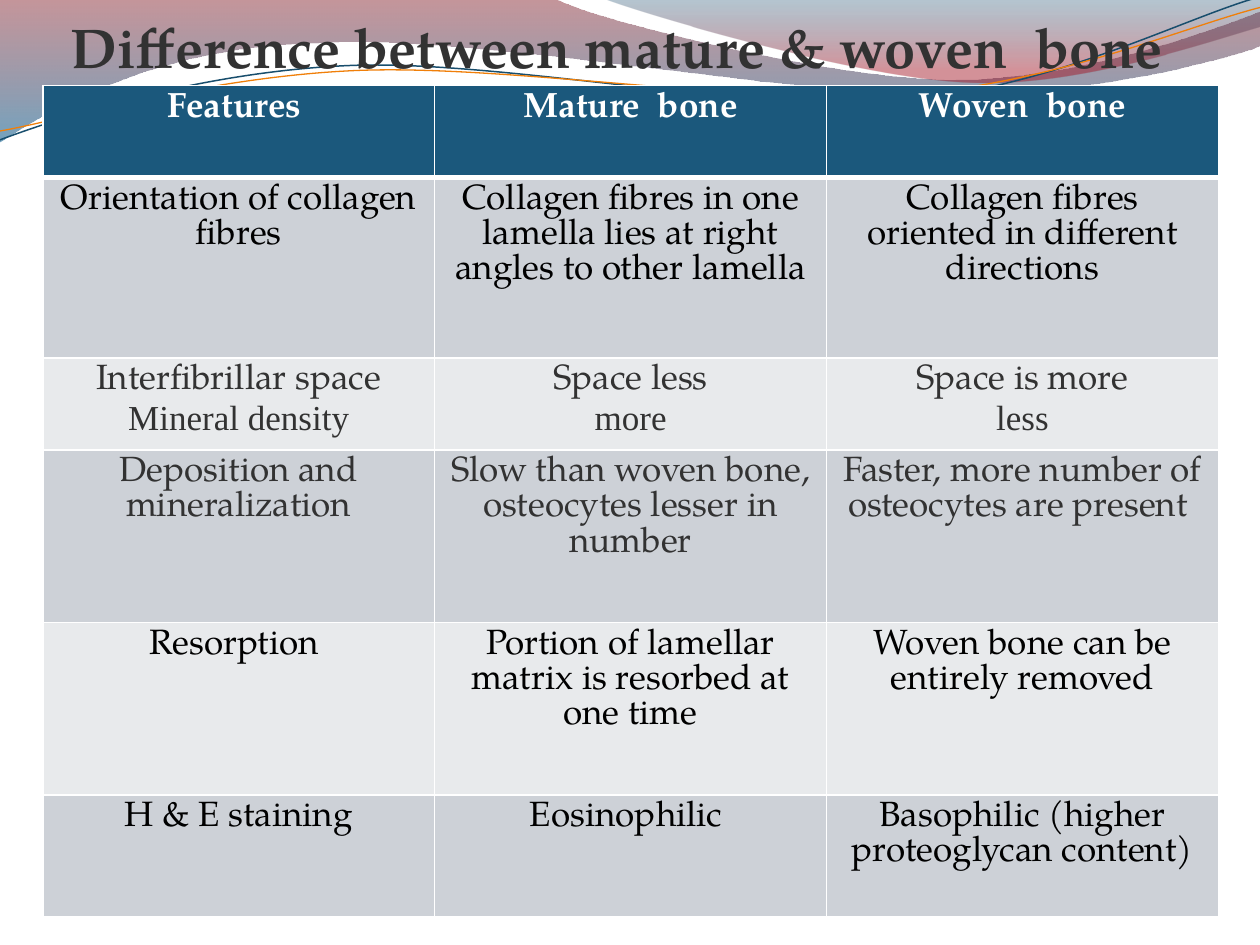
from dataclasses import dataclass
from math import cos, radians, sin
from typing import Optional

from lxml import etree
from pptx import Presentation
from pptx.dml.color import RGBColor
from pptx.enum.text import MSO_ANCHOR, PP_ALIGN
from pptx.oxml.ns import qn
from pptx.util import Inches, Pt

CENTER, LEFT = PP_ALIGN.CENTER, PP_ALIGN.LEFT
BOTTOM = MSO_ANCHOR.BOTTOM

WHITE = RGBColor(0xFF, 0xFF, 0xFF)
BLACK = RGBColor(0x00, 0x00, 0x00)
CHARCOAL = RGBColor(0x32, 0x32, 0x32)
HEADER_BLUE = RGBColor(0x1B, 0x58, 0x7C)
BAND_DARK = RGBColor(0xCD, 0xD1, 0xD7)
BAND_LIGHT = RGBColor(0xE8, 0xEA, 0xEC)
WINE = RGBColor(0x7E, 0x16, 0x21)
OCEAN = RGBColor(0x00, 0x56, 0x89)
NAVY = RGBColor(0x09, 0x44, 0x67)
CRIMSON = RGBColor(0xA1, 0x0F, 0x1F)
LINE_BLUE = RGBColor(0x18, 0x4E, 0x6D)
LINE_ORANGE = RGBColor(0xF0, 0x7F, 0x09)

SERIF, SECOND_SERIF = "TeX Gyre Pagella", "Times New Roman"
LINE_TILT = 2.7


@dataclass(frozen=True)
class GradientStop:
    position: float
    color: RGBColor
    opacity: int


@dataclass(frozen=True)
class Wave:
    """Outline in inches: 2 numbers make a line, 6 a Bezier curve."""
    start: tuple[float, float]
    segments: list[tuple[float, ...]]
    stops: tuple[GradientStop, ...] = ()
    line_color: Optional[RGBColor] = None
    line_width: float = 0
    pivot: tuple[float, float] = (0, 0)


@dataclass(frozen=True)
class TableRow:
    height: float
    texts: tuple[str, str, str]
    fill: RGBColor
    color: RGBColor = BLACK


WAVES = [
    Wave((0, 0), [(4.4, -0.01), (4.76, 0.17, 6.64, 0.63, 7.58, 0.63),
                  (8.53, 0.63, 9.58, 0.26, 10, 0.09), (10.01, 0.36),
                  (9.83, 0.44, 8.7, 0.76, 7.46, 0.75),
                  (6.22, 0.75, 3.82, 0.28, 2.57, 0.34),
                  (1.29, 0.36, 0.46, 0.83, -0.01, 1.13), (0, 0)],
         (GradientStop(0, WINE, 45), GradientStop(1, OCEAN, 55))),
    Wave((4.79, -0.01), [(5.09, 0.11, 6.82, 0.62, 7.69, 0.65),
                         (8.56, 0.69, 9.61, 0.32, 10, 0.21), (10, 0), (4.79, -0.01)],
         (GradientStop(0, NAVY, 30), GradientStop(0.8, CRIMSON, 45))),
    Wave((0, 1.11), [(0.48, 0.93, 1.58, 0.57, 2.77, 0.52),
                     (3.95, 0.47, 5.93, 0.89, 7.13, 0.8),
                     (8.33, 0.71, 9.38, 0.15, 9.98, -0.02)],
         line_color=LINE_BLUE, line_width=0.85, pivot=(4.99, 0.58)),
    Wave((0, 1.04), [(0.47, 0.96, 1.64, 0.61, 2.83, 0.56),
                     (4.03, 0.51, 5.97, 0.84, 7.17, 0.75),
                     (8.36, 0.67, 9.41, 0.21, 10, 0.06)],
         line_color=LINE_ORANGE, line_width=0.75, pivot=(5, 0.59)),
]

ROWS = [
    TableRow(0.73, ("Features ", "Mature  bone", "Woven  bone"), HEADER_BLUE, WHITE),
    TableRow(1.43, ("Orientation of collagen fibres",
                    "Collagen fibres in one lamella lies at right angles to other lamella",
                    "Collagen fibres oriented in different directions"), BAND_DARK),
    TableRow(0.73, ("Interfibrillar space\nMineral density", "Space less\nmore",
                    "Space is more\nless"), BAND_LIGHT, CHARCOAL),
    TableRow(1.37, ("Deposition and mineralization",
                    "Slow than woven bone, osteocytes lesser in number",
                    "Faster, more number of osteocytes are present "), BAND_DARK, CHARCOAL),
    TableRow(1.37, ("Resorption ", "Portion of lamellar matrix is resorbed at one time",
                    "Woven bone can be entirely removed"), BAND_LIGHT),
    TableRow(0.97, ("H & E staining", "Eosinophilic ",
                    "Basophilic (higher proteoglycan content)"), BAND_DARK),
]


def outline_points(wave: Wave) -> list[tuple[int, int]]:
    """List every corner and control point, levelled around the pivot of a line."""
    points = [wave.start]
    for segment in wave.segments:
        points += zip(segment[::2], segment[1::2])
    angle = 0 if wave.stops else radians(LINE_TILT)
    px, py = wave.pivot
    return [(Inches(px + (x - px) * cos(angle) - (y - py) * sin(angle)),
             Inches(py + (x - px) * sin(angle) + (y - py) * cos(angle)))
            for x, y in points]


def bend_segments(shape, wave: Wave) -> None:
    """Join each three steps of a curved segment into one Bezier curve."""
    steps = iter(list(shape._element.iter(qn("a:lnTo"))))
    for segment in wave.segments:
        first = next(steps)
        if len(segment) == 2:
            continue
        first.addprevious(curve := etree.Element(qn("a:cubicBezTo")))
        for step in (first, next(steps), next(steps)):
            curve.append(step[0])
            step.getparent().remove(step)


def draw_wave(slide, wave: Wave) -> None:
    first, *others = outline_points(wave)
    builder = slide.shapes.build_freeform(*first)
    builder.add_line_segments(others, close=bool(wave.stops))
    shape = builder.convert_to_shape()
    bend_segments(shape, wave)
    shape.shadow.inherit = False
    if not wave.stops:
        shape.rotation = 360 - LINE_TILT
        shape.fill.background()
        shape.line.color.rgb = wave.line_color
        shape.line.width = Pt(wave.line_width)
        return
    shape.line.fill.background()
    shape.fill.gradient()
    shape.fill.gradient_angle = 270
    for stop, wanted in zip(shape.fill.gradient_stops, wave.stops):
        stop.position = wanted.position
        stop.color.rgb = wanted.color
    for color, wanted in zip(shape._element.spPr.iter(qn("a:srgbClr")), wave.stops):
        etree.SubElement(color, qn("a:alpha"), val=str(wanted.opacity * 1000))


def format_run(run, size: float, color: RGBColor, bold: bool, font: str = SERIF) -> None:
    run.font.name, run.font.size = font, Pt(size)
    run.font.bold, run.font.color.rgb = bold, color


def draw_borders(cell, top: float, bottom: float) -> None:
    properties = cell._tc.get_or_add_tcPr()
    for side, width in (("L", 1), ("R", 1), ("T", top), ("B", bottom)):
        line = etree.SubElement(properties, qn(f"a:ln{side}"), w=str(Pt(width)))
        solid = etree.SubElement(line, qn("a:solidFill"))
        etree.SubElement(solid, qn("a:srgbClr"), val=str(WHITE))


def draw_table(slide, left: float, top: float, width: float) -> None:
    height = sum(row.height for row in ROWS)
    table = slide.shapes.add_table(len(ROWS), 3, Inches(left), Inches(top),
                                   Inches(width), Inches(height)).table
    for row_index, row in enumerate(ROWS):
        table.rows[row_index].height = Inches(row.height)
        for column_index, text in enumerate(row.texts):
            cell = table.cell(row_index, column_index)
            draw_borders(cell, 3 if row_index == 1 else 1, 3 if row_index == 0 else 1)
            cell.fill.solid()
            cell.fill.fore_color.rgb = row.fill
            cell.text_frame.text = text
            for para, font in zip(cell.text_frame.paragraphs, (SERIF, SECOND_SERIF)):
                para.alignment = CENTER
                format_run(para.runs[0], 20, row.color, row_index == 0, font)


def place_title(slide, text: str) -> None:
    title = slide.shapes.title
    title.left, title.top = 0, Inches(-0.62)
    title.width, title.height = Inches(10), Inches(1.25)
    frame = title.text_frame
    frame.text = text
    frame.vertical_anchor = BOTTOM
    frame.margin_left, frame.margin_top = Inches(0.56), Inches(0.05)
    frame.margin_right = frame.margin_bottom = 0
    frame.paragraphs[0].alignment = LEFT
    format_run(frame.paragraphs[0].runs[0], 32, CHARCOAL, True)
    # Bring the title in front of the waves
    slide.shapes._spTree.append(title._element)


def main() -> None:
    deck = Presentation()
    deck.slide_width, deck.slide_height = Inches(10), Inches(7.5)
    slide = deck.slides.add_slide(deck.slide_layouts[5])
    # Decorative waves along the top
    for wave in WAVES:
        draw_wave(slide, wave)
    # Comparison table and title
    draw_table(slide, 0.34, 0.68, 9.33)
    place_title(slide, "Difference between mature & woven  bone")
    deck.save("out.pptx")


if __name__ == "__main__":
    main()
